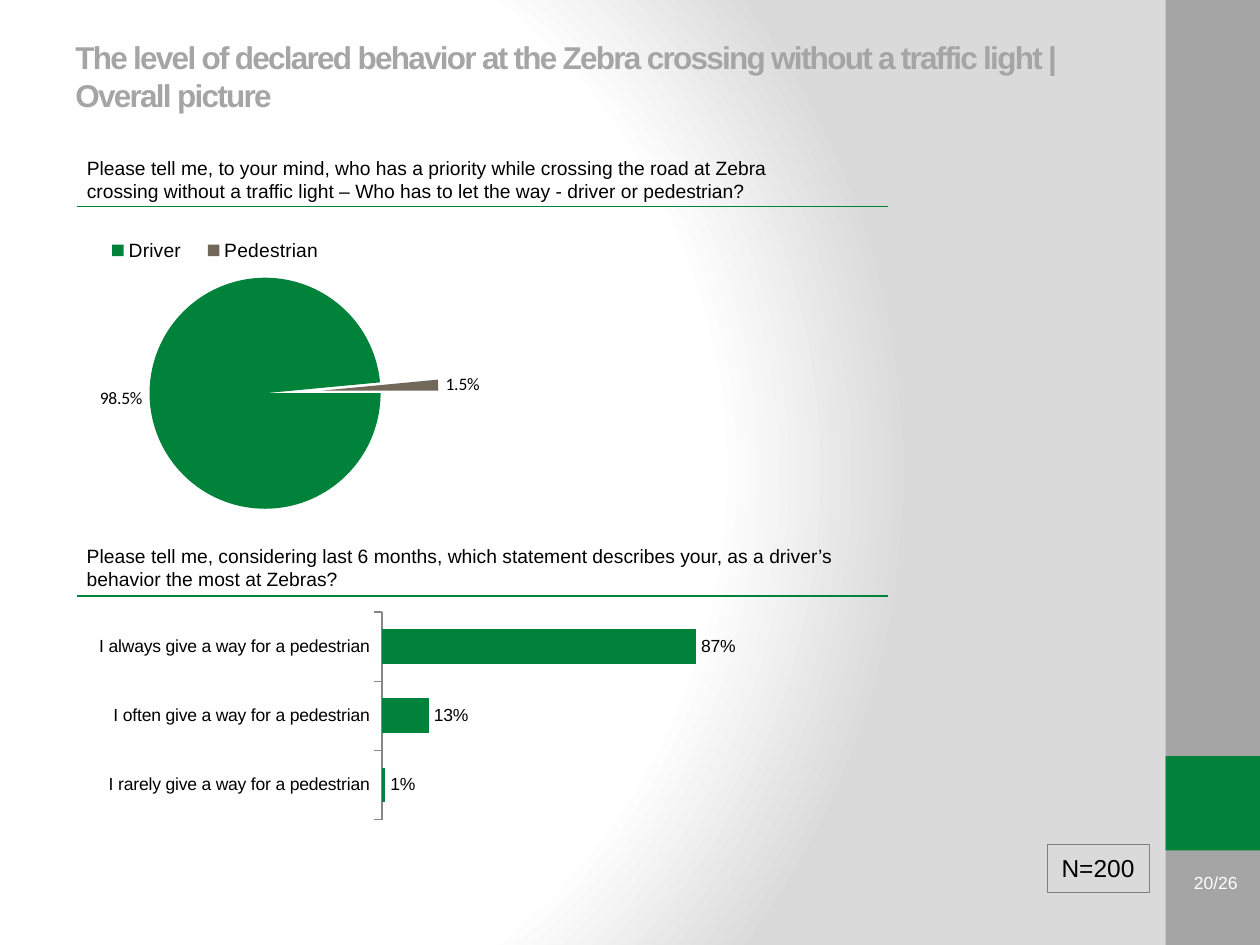
from lxml import etree
from pptx import Presentation
from pptx.chart.data import CategoryChartData
from pptx.dml.color import RGBColor
from pptx.enum.chart import XL_CHART_TYPE as ChartType, XL_LABEL_POSITION as LabelPosition
from pptx.enum.chart import XL_LEGEND_POSITION as LegendPosition, XL_TICK_MARK as TickMark
from pptx.enum.shapes import MSO_CONNECTOR as Connector, MSO_SHAPE as Shape
from pptx.enum.text import MSO_ANCHOR as Anchor, PP_ALIGN as Align
from pptx.oxml import parse_xml
from pptx.oxml.ns import nsdecls, qn
from pptx.util import Inches, Pt

GREEN, GRAY, BROWN, BLACK, WHITE = "00823B", "A5A5A5", "71685A", "000000", "FFFFFF"
BACKGROUND_STOPS = [(0, WHITE), (75, WHITE), (100, "DADADA")]
BANDS = [((9.25, 0, 0.75, 7.5), GRAY), ((9.25, 6, 0.75, 0.75), GREEN)]
TITLE = "The level of declared behavior at the Zebra crossing without a traffic light | Overall picture"
QUESTIONS = [
    ((0.59, 1.19, 5.98, 0.47), 1.64,
     "Please tell me, to your mind, who has a priority while crossing the road at Zebra "
     "crossing without a traffic light – Who has to let the way - driver or pedestrian?"),
    ((0.59, 4.27, 6.46, 0.47), 4.73,
     "Please tell me, considering last 6 months, which statement describes your, as a driver’s "
     "behavior the most at Zebras?"),
]
PRIORITY = {"Driver": 0.985, "Pedestrian": 0.015}
BEHAVIOR = {
    "I always give a way for a pedestrian": 0.87,
    "I often give a way for a pedestrian": 0.13,
    "I rarely give a way for a pedestrian": 0.01,
}


def color(value):
    return RGBColor.from_string(value)


def box(values):
    return [Inches(value) for value in values]


def paint(fill, value):
    fill.solid()
    fill.fore_color.rgb = color(value)


def style(font, size, value=BLACK, name="Arial"):
    font.size, font.name = Pt(size), name
    font.color.rgb = color(value)


def set_background(slide):
    slide.background.fill.gradient()
    gradient = slide.background._cSld.find(".//" + qn("a:gradFill"))
    stops = "".join(
        f'<a:gs pos="{position * 1000}"><a:srgbClr val="{value}"/></a:gs>'
        for position, value in BACKGROUND_STOPS)
    gradient.getparent().replace(gradient, parse_xml(
        f'<a:gradFill {nsdecls("a")} rotWithShape="1"><a:gsLst>{stops}</a:gsLst>'
        '<a:path path="circle"><a:fillToRect l="20000" t="50000" r="100000" b="50000"/></a:path>'
        '</a:gradFill>'))


def add_rectangle(slide, place, fill=None):
    shape = slide.shapes.add_shape(Shape.RECTANGLE, *box(place))
    shape.shadow.inherit = False
    if fill:
        paint(shape.fill, fill)
        shape.line.fill.background()
    else:
        shape.fill.background()
        shape.line.color.rgb = color("808080")
        shape.line.width = Pt(0.5)
    return shape


def write(shape, text, size, value=BLACK, align=Align.LEFT, anchor=Anchor.MIDDLE):
    frame = shape.text_frame
    frame.word_wrap, frame.vertical_anchor = True, anchor
    paragraph = frame.paragraphs[0]
    paragraph.alignment = align
    run = paragraph.add_run()
    run.text = text
    style(run.font, size, value)
    return run


def add_text(slide, place, *args, **options):
    return write(slide.shapes.add_textbox(*box(place)), *args, **options)


def add_rule(slide, y):
    line = slide.shapes.add_connector(Connector.STRAIGHT, *box((0.61, y, 7.05, y)))
    line.line.color.rgb = color(GREEN)
    line.line.width = Pt(1)
    etree.SubElement(line._element.spPr, qn("a:effectLst"))


def set_layout(element, place, inner=False):
    for old in element.findall(qn("c:layout")):
        element.remove(old)
    target = '<c:layoutTarget val="inner"/>' if inner else ""
    sizes = "".join(f'<c:{key} val="{value}"/>' for key, value in zip("xywh", place))
    layout = parse_xml(
        f'<c:layout {nsdecls("c")}><c:manualLayout>{target}<c:xMode val="edge"/>'
        f'<c:yMode val="edge"/>{sizes}</c:manualLayout></c:layout>')
    if inner:
        element.insert(0, layout)
    else:
        element.find(qn("c:legendPos")).addnext(layout)


def add_chart(slide, kind, place, values, plot_place, size, font, label_format):
    data = CategoryChartData()
    data.categories = list(values)
    data.add_series("Series 1", list(values.values()))
    chart = slide.shapes.add_chart(kind, *box(place), data).chart
    chart.has_title = chart.has_legend = False
    style(chart.font, size, name=font)
    set_layout(chart._chartSpace.chart.plotArea, plot_place, inner=True)
    plot = chart.plots[0]
    plot.has_data_labels = True
    labels = plot.data_labels
    labels.show_value = True
    labels.number_format, labels.number_format_is_linked = label_format, False
    labels.position = LabelPosition.OUTSIDE_END
    style(labels.font, 10, name=font)
    return chart, plot


def add_priority_pie(slide):
    chart, plot = add_chart(slide, ChartType.PIE, (0.59, 1.68, 4.66, 2.93), PRIORITY,
                            (0.128, 0.097, 0.492, 0.783), 18, "Calibri", "0.0%")
    series = plot.series[0]
    for index, value in enumerate((GREEN, BROWN)):
        paint(series.points[index].format.fill, value)
    series._element.find(qn("c:dPt")).addprevious(
        parse_xml(f'<c:explosion {nsdecls("c")} val="25"/>'))
    plot._element.find(qn("c:dLbls")).addnext(
        parse_xml(f'<c:firstSliceAng {nsdecls("c")} val="90"/>'))
    chart.has_legend = True
    legend = chart.legend
    legend.position, legend.include_in_layout = LegendPosition.RIGHT, False
    style(legend.font, 11)
    set_layout(legend._element, (0.03, 0.05, 0.42, 0.11))


def add_behavior_bars(slide):
    chart, plot = add_chart(slide, ChartType.BAR_CLUSTERED, (0.32, 4.76, 6.29, 1.75), BEHAVIOR,
                            (0.431, 0.056, 0.456, 0.944), 12, "Arial", "0%")
    plot.gap_width, plot.vary_by_categories = 100, False
    paint(plot.series[0].format.fill, GREEN)
    categories, scale = chart.category_axis, chart.value_axis
    categories.reverse_order = True
    categories.major_tick_mark = TickMark.OUTSIDE
    categories.format.line.color.rgb = color("868686")
    style(categories.tick_labels.font, 10)
    scale.minimum_scale, scale.maximum_scale = 0, 1
    scale.has_major_gridlines = scale.visible = False


def main():
    """Build the slide on declared behavior at Zebra crossings."""
    presentation = Presentation()
    presentation.slide_width, presentation.slide_height = Inches(10), Inches(7.5)
    slide = presentation.slides.add_slide(presentation.slide_layouts[6])
    set_background(slide)
    for place, fill in BANDS:
        add_rectangle(slide, place, fill)
    add_text(slide, (9.33, 6.79, 0.59, 0.42), "20/26", 10, WHITE, Align.RIGHT)
    title = add_text(slide, (0.5, 0.3, 8.33, 0.61), TITLE, 18, GRAY)
    title.font.bold = True
    title._r.get_or_add_rPr().set("spc", "-100")
    for place, rule, question in QUESTIONS:
        add_text(slide, place, question, 11, anchor=Anchor.TOP)
        add_rule(slide, rule)
    write(add_rectangle(slide, (8.31, 6.7, 0.81, 0.38)), "N=200", 14, align=Align.CENTER)
    add_priority_pie(slide)
    add_behavior_bars(slide)
    presentation.save("out.pptx")


if __name__ == "__main__":
    main()
